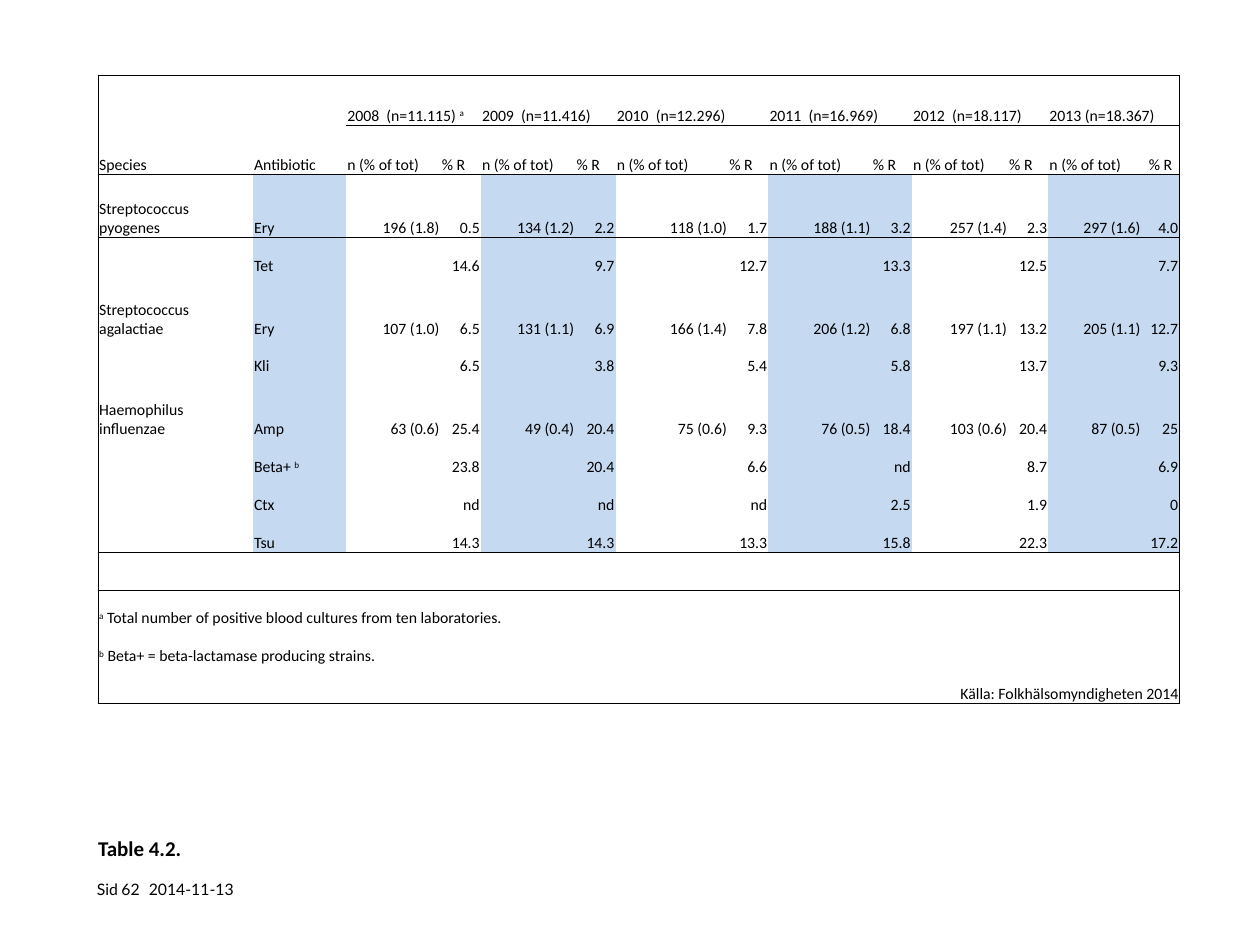
import lxml.etree
import pptx
import pptx.dml.color
import pptx.enum.text
import pptx.oxml.ns
import pptx.util

Pt = pptx.util.Pt
ALIGN = pptx.enum.text.PP_ALIGN
ANCHOR = pptx.enum.text.MSO_ANCHOR
BLACK = pptx.dml.color.RGBColor(0x00, 0x00, 0x00)
BAND = pptx.dml.color.RGBColor(0xC5, 0xD9, 0xF1)
NO_STYLE = "{2D5ABB26-0587-4C30-8999-92F81FD0307C}"
TABLE_FONT = {"name": "Calibri", "size": Pt(9)}
FOOTER_FONT = {"name": "Lato", "size": Pt(9)}
TITLE_FONT = {"name": "Calibri", "size": Pt(12), "bold": True}
CELL_FORMAT = {"margin_left": Pt(0.7), "margin_right": Pt(0.7), "margin_top": Pt(0.7),
               "margin_bottom": 0, "vertical_anchor": ANCHOR.BOTTOM}
NO_MARGINS = dict.fromkeys(("margin_left", "margin_right", "margin_top", "margin_bottom"), 0)

COLUMN_WIDTHS = [88.5, 53.3, 54, 23, 54, 23, 64.3, 23, 59, 23, 55, 23, 53.3, 21.6]
ROW_HEIGHTS = [28.8, 28] + [36, 21.6] * 3 + [21.6] * 6
YEARS = ["2008  (n=11.115) ^a", "2009  (n=11.416)", "2010  (n=12.296)",
         "2011  (n=16.969)", "2012  (n=18.117)", "2013 (n=18.367)"]
DATA = [
    ("Streptococcus pyogenes", "Ery",
     ["196 (1.8)", "134 (1.2)", "118 (1.0)", "188 (1.1)", "257 (1.4)", "297 (1.6)"],
     ["0.5", "2.2", "1.7", "3.2", "2.3", "4.0"]),
    ("", "Tet", [""] * 6, ["14.6", "9.7", "12.7", "13.3", "12.5", "7.7"]),
    ("Streptococcus agalactiae", "Ery",
     ["107 (1.0)", "131 (1.1)", "166 (1.4)", "206 (1.2)", "197 (1.1)", "205 (1.1)"],
     ["6.5", "6.9", "7.8", "6.8", "13.2", "12.7"]),
    ("", "Kli", [""] * 6, ["6.5", "3.8", "5.4", "5.8", "13.7", "9.3"]),
    ("Haemophilus influenzae", "Amp",
     ["63 (0.6)", "49 (0.4)", "75 (0.6)", "76 (0.5)", "103 (0.6)", "87 (0.5)"],
     ["25.4", "20.4", "9.3", "18.4", "20.4", "25"]),
    ("", "Beta+ ^b", [""] * 6, ["23.8", "20.4", "6.6", "nd", "8.7", "6.9"]),
    ("", "Ctx", [""] * 6, ["nd", "nd", "nd", "2.5", "1.9", "0"]),
    ("", "Tsu", [""] * 6, ["14.3", "14.3", "13.3", "15.8", "22.3", "17.2"]),
]
FOOTNOTES = ["^a^ Total number of positive blood cultures from ten laboratories.",
             "^b^ Beta+ = beta-lactamase producing strains."]
SOURCE = "Källa: Folkhälsomyndigheten 2014"
FIRST_DATA = 2
LAST_DATA = FIRST_DATA + len(DATA) - 1
LAST_ROW = len(ROW_HEIGHTS) - 1
LAST_COLUMN = len(COLUMN_WIDTHS) - 1


def apply_format(target, values):
    """Set each attribute in values on target."""
    for name, value in values.items():
        setattr(target, name, value)


def write_text(paragraph, text, font, alignment=ALIGN.LEFT):
    """Write text whose parts between carets are superscript."""
    paragraph.alignment = alignment
    for index, part in enumerate(text.split("^")):
        if part:
            run = paragraph.add_run()
            run.text = part
            apply_format(run.font, font)
            run.font.color.rgb = BLACK
            if index % 2:
                run.font._element.set("baseline", "30000")
    if not text:
        ending = lxml.etree.SubElement(paragraph._p, pptx.oxml.ns.qn("a:endParaRPr"))
        ending.set("sz", str(int(font["size"].pt * 100)))


def add_label(slide, text, left, top, width, height, anchor, alignment=ALIGN.LEFT, wrap=True):
    """Add a small footer text without margins."""
    frame = slide.shapes.add_textbox(Pt(left), Pt(top), Pt(width), Pt(height)).text_frame
    apply_format(frame, NO_MARGINS | {"word_wrap": wrap, "vertical_anchor": anchor})
    write_text(frame.paragraphs[0], text, FOOTER_FONT, alignment)


def add_title(slide, text):
    """Move and format the title placeholder."""
    title = slide.shapes.title
    apply_format(title, {"left": Pt(56), "top": Pt(459.4), "width": Pt(230), "height": Pt(32.4)})
    frame = title.text_frame
    apply_format(frame, NO_MARGINS | {"vertical_anchor": ANCHOR.BOTTOM,
                                      "auto_size": pptx.enum.text.MSO_AUTO_SIZE.NONE})
    write_text(frame.paragraphs[0], text, TITLE_FONT)
    frame.paragraphs[0].line_spacing = Pt(34)


def add_border(cell, tag):
    """Draw a thin black line on one side of a cell."""
    line = lxml.etree.SubElement(cell._tc.get_or_add_tcPr(), pptx.oxml.ns.qn(tag), w=str(Pt(0.5)))
    fill = lxml.etree.SubElement(line, pptx.oxml.ns.qn("a:solidFill"))
    lxml.etree.SubElement(fill, pptx.oxml.ns.qn("a:srgbClr"), val=str(BLACK))


def is_ruled(row, column):
    """Tell whether a rule runs under the cell."""
    return row in (1, LAST_DATA, LAST_ROW) or (row == 0 and column >= 2)


def is_banded(row, column):
    """Tell whether the cell belongs to a shaded column."""
    return FIRST_DATA <= row <= LAST_DATA and (column == 1 or column >= 4 and column % 4 < 2)


def get_alignment(row, column):
    """Align figures and source right, other text left."""
    if row == 1 and column == LAST_COLUMN:
        return ALIGN.CENTER
    if row == LAST_ROW or (FIRST_DATA <= row <= LAST_DATA and column >= 2):
        return ALIGN.RIGHT
    return ALIGN.LEFT


def get_texts():
    """Lay out the wording by row and column."""
    texts = {(0, 2 + 2 * index): year for index, year in enumerate(YEARS)}
    rows = [("Species", "Antibiotic", ["n (% of tot)"] * 6, ["% R"] * 6)] + DATA
    for row, (species, antibiotic, counts, shares) in enumerate(rows, 1):
        pairs = [text for pair in zip(counts, shares) for text in pair]
        for column, text in enumerate([species, antibiotic] + pairs):
            texts[row, column] = text
    for index, note in enumerate(FOOTNOTES):
        texts[LAST_DATA + 2 + index, 0] = note
    texts[LAST_ROW, 10] = SOURCE
    return texts


def format_cell(cell, row, column, text):
    """Write, rule and shade one cell."""
    apply_format(cell, CELL_FORMAT)
    write_text(cell.text_frame.paragraphs[0], text, TABLE_FONT, get_alignment(row, column))
    last_column = column + cell.span_width - 1
    sides = {"a:lnL": column == 0, "a:lnR": last_column == LAST_COLUMN,
             "a:lnT": row == 0 or is_ruled(row - 1, column), "a:lnB": is_ruled(row, column)}
    for tag, shown in sides.items():
        if shown:
            add_border(cell, tag)
    if is_banded(row, column):
        cell.fill.solid()
        cell.fill.fore_color.rgb = BAND
    else:
        cell.fill.background()


def add_resistance_table(slide):
    """Add the table of species, antibiotics and resistance by year."""
    frame = slide.shapes.add_table(len(ROW_HEIGHTS), len(COLUMN_WIDTHS), Pt(56), Pt(43),
                                   Pt(sum(COLUMN_WIDTHS)), Pt(sum(ROW_HEIGHTS)))
    table = frame.table
    apply_format(table, {"first_row": False, "horz_banding": False})
    table._tbl.tblPr.find(pptx.oxml.ns.qn("a:tableStyleId")).text = NO_STYLE
    for column, width in zip(table.columns, COLUMN_WIDTHS):
        column.width = Pt(width)
    for row, height in zip(table.rows, ROW_HEIGHTS):
        row.height = Pt(height)
    spans = [(0, column, column + 1) for column in range(2, LAST_COLUMN, 2)]
    spans += [(LAST_DATA + 2, 0, 5), (LAST_DATA + 3, 0, 3), (LAST_ROW, 10, LAST_COLUMN)]
    for row, first, last in spans:
        table.cell(row, first).merge(table.cell(row, last))
    texts = get_texts()
    for row in range(LAST_ROW + 1):
        for column in range(LAST_COLUMN + 1):
            format_cell(table.cell(row, column), row, column, texts.get((row, column), ""))


def main():
    """Build and save the slide."""
    presentation = pptx.Presentation()
    apply_format(presentation, {"slide_width": Pt(720), "slide_height": Pt(540)})
    slide = presentation.slides.add_slide(presentation.slide_layouts[5])
    add_label(slide, "Sid", 55.4, 502.6, 12.2, 10.8, ANCHOR.TOP, wrap=False)
    add_label(slide, "62", 56, 499, 23.8, 14.4, ANCHOR.BOTTOM, ALIGN.RIGHT)
    add_label(slide, "2014-11-13", 85, 499, 62, 14.4, ANCHOR.BOTTOM)
    add_resistance_table(slide)
    add_title(slide, "Table 4.2.")
    presentation.save("out.pptx")


if __name__ == "__main__":
    main()
